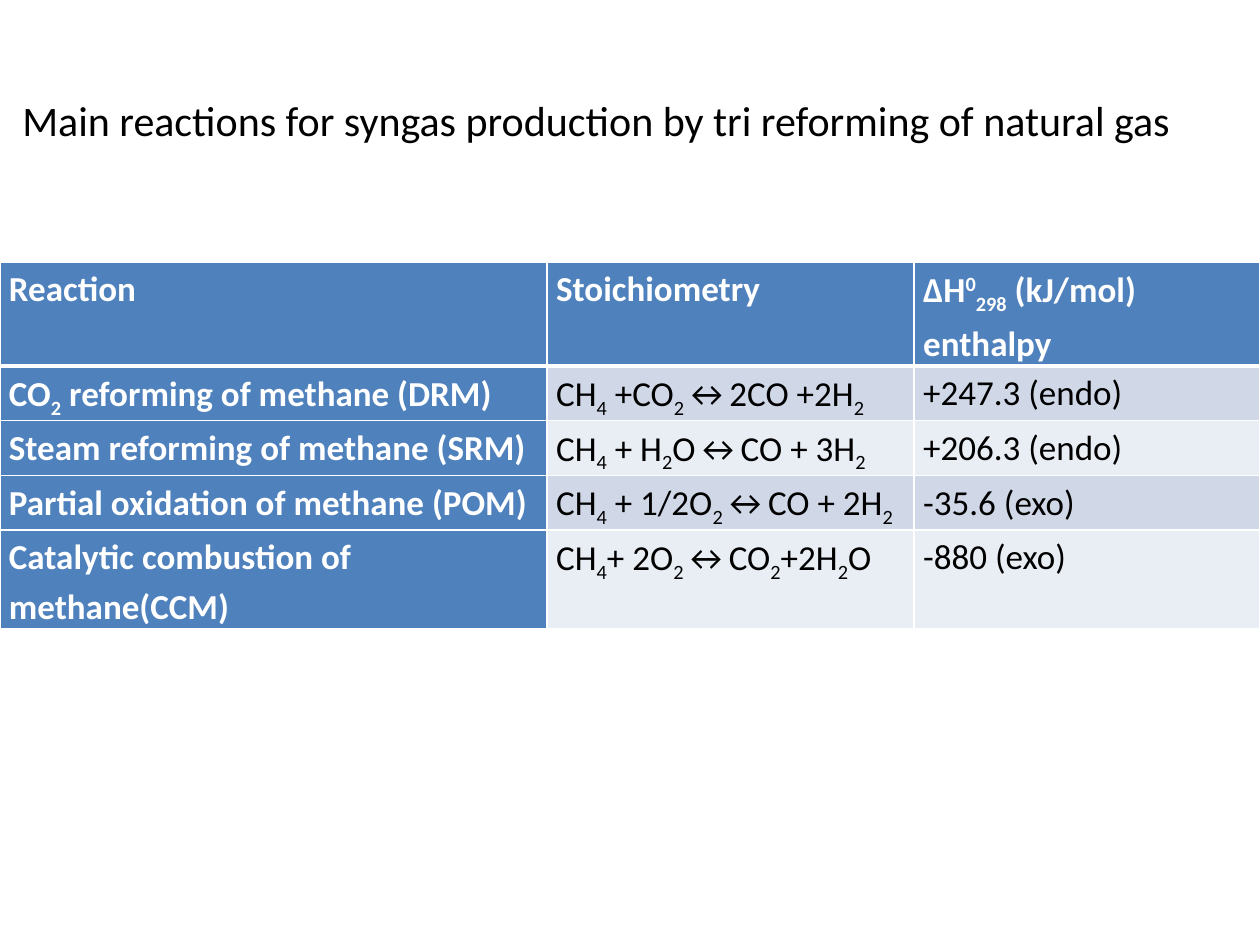
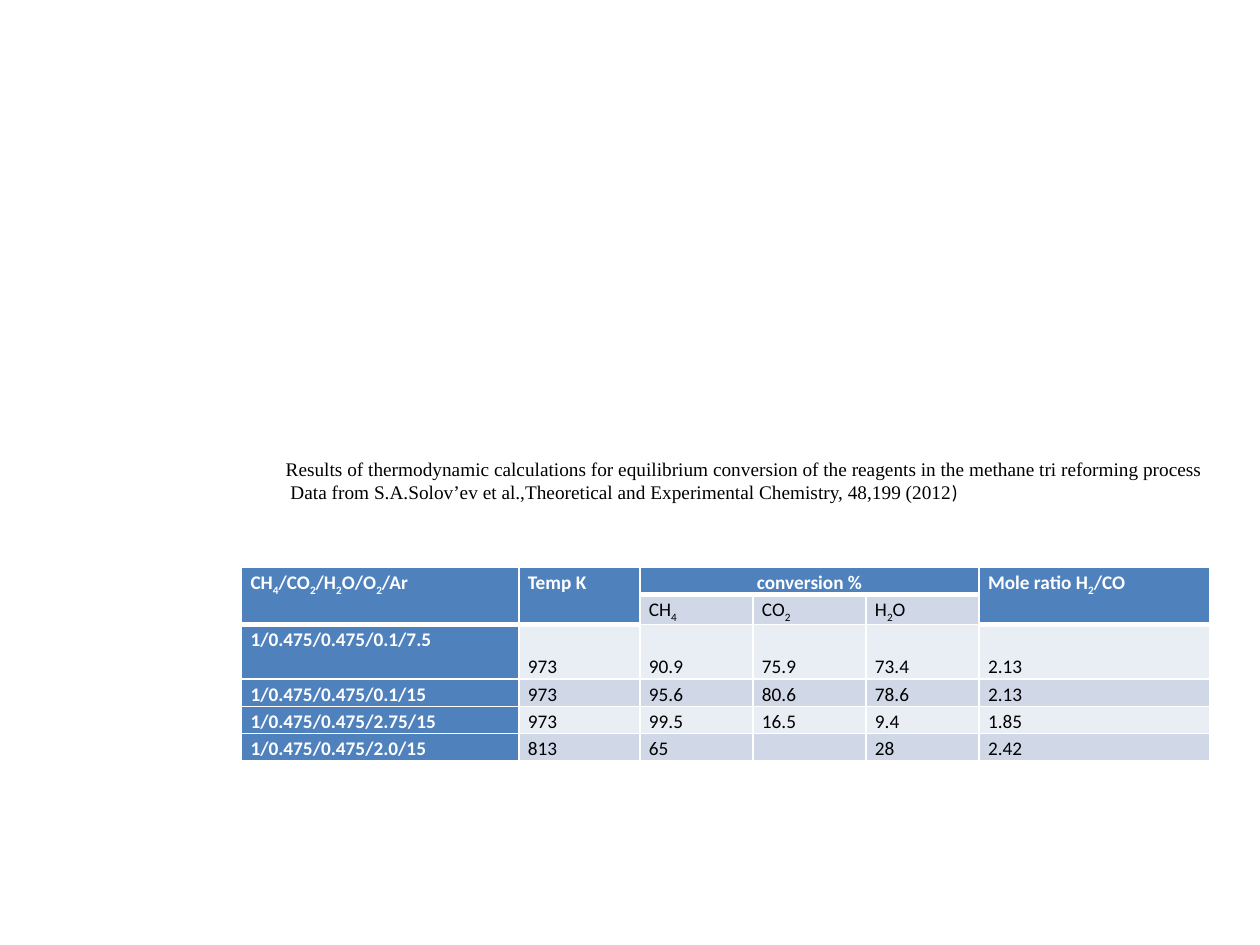
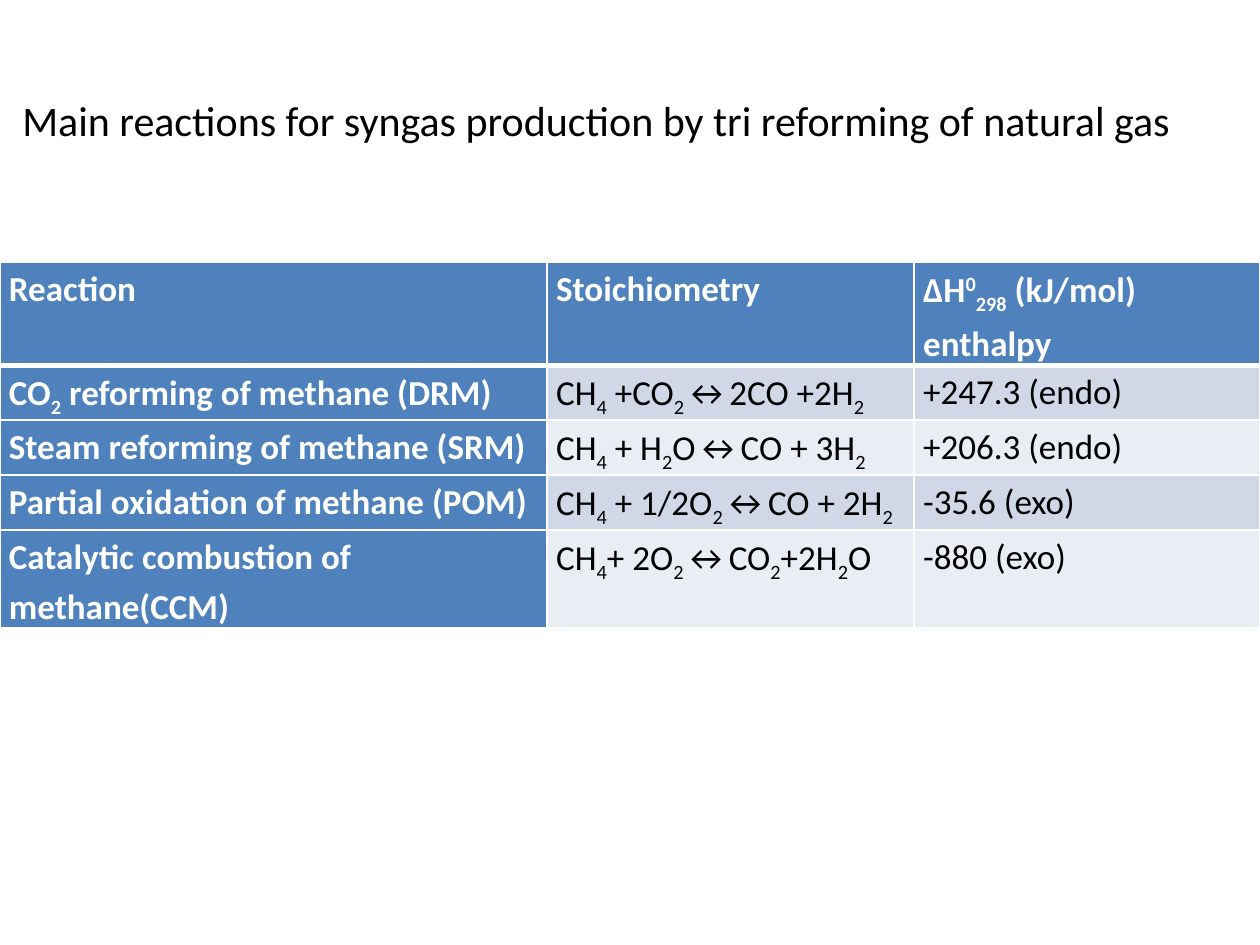
"""Build three slides on the tri reforming of methane."""
from lxml import etree
from pptx import Presentation
from pptx import util as u
from pptx.dml import color
from pptx.enum import text
from pptx.oxml import ns

COLORS = {"head": "4F81BD", "odd": "D0D8E8", "even": "E9EDF4", "light": "FFFFFF", "dark": "000000"}
BASELINES = {"_": "-25000", "^": "30000"}
BODY_FONT = "Calibri"
CAPTION_FONT = "Times New Roman"
TOP = text.MSO_ANCHOR.TOP
BOTTOM = text.MSO_ANCHOR.BOTTOM
CELL_FORMAT = {"margin_left": u.Cm(0.18), "margin_right": u.Cm(0.18), "margin_top": 0, "margin_bottom": 0}

REACTIONS = [
    ["Reaction", "Stoichiometry", "∆H|^0|_298| (kJ/mol) enthalpy"],
    ["CO|_2| reforming of methane (DRM)", "CH|_4| +CO|_2|↔2CO +2H|_2", "+247.3 (endo)"],
    ["Steam reforming of methane (SRM)", "CH|_4| + H|_2|O↔CO + 3H|_2", "+206.3 (endo)"],
    ["Partial oxidation of methane (POM)", "CH|_4| + 1/2O|_2|↔CO + 2H|_2", "-35.6 (exo)"],
    ["Catalytic combustion of methane(CCM)", "CH|_4|+ 2O|_2|↔CO|_2|+2H|_2|O", "-880 (exo)"],
]
CONVERSIONS = [
    ["CH|_4|/CO|_2|/H|_2|O/O|_2|/Ar", "Temp K", "conversion %", "", "", "Mole ratio H|_2|/CO"],
    ["", "", "CH|_4", "CO|_2", "H|_2|O", ""],
    ["1/0.475/0.475/0.1/7.5", "973", "90.9", "75.9", "73.4", "2.13"],
    ["1/0.475/0.475/0.1/15", "973", "95.6", "80.6", "78.6", "2.13"],
    ["1/0.475/0.475/2.75/15", "973", "99.5", "16.5", "9.4", "1.85"],
    ["1/0.475/0.475/2.0/15", "813", "65", "", "28", "2.42"],
]


def set_formats(target, formats):
    for name, value in formats.items():
        setattr(target, name, value)


class Deck:
    def __init__(self):
        self.deck = Presentation()
        set_formats(self.deck, {"slide_width": u.Cm(25.4), "slide_height": u.Cm(19.05)})
        self.slide = None

    def new_slide(self):
        self.slide = self.deck.slides.add_slide(self.deck.slide_layouts[6])

    def add_runs(self, paragraph, content, size, font=BODY_FONT, ink="dark", bold=False):
        for piece in filter(None, content.split("|")):
            baseline = BASELINES.get(piece[0])
            run = paragraph.add_run()
            run.text = piece[1:] if baseline else piece
            set_formats(run.font, {"size": u.Pt(size), "name": font, "bold": bold})
            run.font.color.rgb = color.RGBColor.from_string(COLORS[ink])
            if baseline:
                run.font._element.set("baseline", baseline)
        if not content:
            paragraph._p.get_or_add_endParaRPr().set("sz", str(size * 100))

    def text_box(self, place, lines, size, frame_format):
        frame = self.slide.shapes.add_textbox(*map(u.Cm, place)).text_frame
        set_formats(frame, frame_format)
        for number, line in enumerate(lines):
            paragraph = frame.add_paragraph() if number else frame.paragraphs[0]
            for content, font in line:
                self.add_runs(paragraph, content, size, font)

    def borders(self, cell, top, bottom):
        properties = cell._tc.get_or_add_tcPr()
        for position, (side, width) in enumerate({"L": 1, "R": 1, "T": top, "B": bottom}.items()):
            line = etree.Element(ns.qn(f"a:ln{side}"), w=str(u.Pt(width)))
            fill = etree.SubElement(line, ns.qn("a:solidFill"))
            etree.SubElement(fill, ns.qn("a:srgbClr"), val=COLORS["light"])
            properties.insert(position, line)

    def table(self, corner, widths, heights, rows, size, header_depths,
              value_anchor=TOP, merges=(), centred=()):
        extent = (sum(widths), sum(heights))
        grid = self.slide.shapes.add_table(
            len(rows), len(widths), *map(u.Cm, corner + extent)).table
        for column, width in zip(grid.columns, widths):
            column.width = u.Cm(width)
        for row, height in zip(grid.rows, heights):
            row.height = u.Cm(height)
        for r, contents in enumerate(rows):
            for c, content in enumerate(contents):
                cell = grid.cell(r, c)
                depth = header_depths[c]
                header = r < depth
                accent = header or c == 0
                band = "head" if accent else "odd" if r % 2 else "even"
                set_formats(cell, CELL_FORMAT)
                cell.vertical_anchor = TOP if accent else value_anchor
                cell.fill.solid()
                cell.fill.fore_color.rgb = color.RGBColor.from_string(COLORS[band])
                self.borders(cell, 3 if r == depth else 1, 3 if header else 1)
                paragraph = cell.text_frame.paragraphs[0]
                paragraph.line_spacing = 1.15
                if (r, c) in centred:
                    paragraph.alignment = text.PP_ALIGN.CENTER
                self.add_runs(paragraph, content, size, ink="light" if accent else "dark", bold=accent)
        for first, last in merges:
            grid.cell(*first).merge(grid.cell(*last))

    def reactions_slide(self):
        self.new_slide()
        self.table((0, 5.28), (11.03, 7.4, 6.97), (2.08, 1.1, 1.1, 1.1, 1.97),
                   REACTIONS, 20, (1, 1, 1))
        title = "Main reactions for syngas production by tri reforming of natural gas"
        self.text_box((0.2, 1.78, 24.33, 2.06), [[(title, BODY_FONT)]], 24,
                      {"word_wrap": True, "vertical_anchor": TOP})

    def conversions_slide(self):
        self.new_slide()
        self.table((4.87, 11.43), (5.59, 2.44, 2.28, 2.28, 2.28, 4.65),
                   (0.55, 0.6, 1.1, 0.55, 0.55, 0.55), CONVERSIONS, 11, (2, 2, 1, 1, 1, 2),
                   value_anchor=BOTTOM,
                   merges=[((0, c), (1, c)) for c in (0, 1, 5)] + [((0, 2), (0, 4))],
                   centred=[(0, 2)])
        caption = [
            [("Results of thermodynamic calculations for equilibrium conversion of the reagents "
              "in the methane tri reforming process", CAPTION_FONT)],
            [(" Data from S.A.Solov’ev et al.,Theoretical and Experimental Chemistry, "
              "48,199 (2012", CAPTION_FONT), (")", BODY_FONT)],
        ]
        self.text_box((5.51, 9.09, 19.35, 1.19), caption, 11,
                      {"word_wrap": False, "vertical_anchor": text.MSO_ANCHOR.MIDDLE,
                       "auto_size": text.MSO_AUTO_SIZE.SHAPE_TO_FIT_TEXT})


def main():
    show = Deck()
    show.reactions_slide()
    show.conversions_slide()
    show.reactions_slide()
    show.deck.save("out.pptx")


if __name__ == "__main__":
    main()
